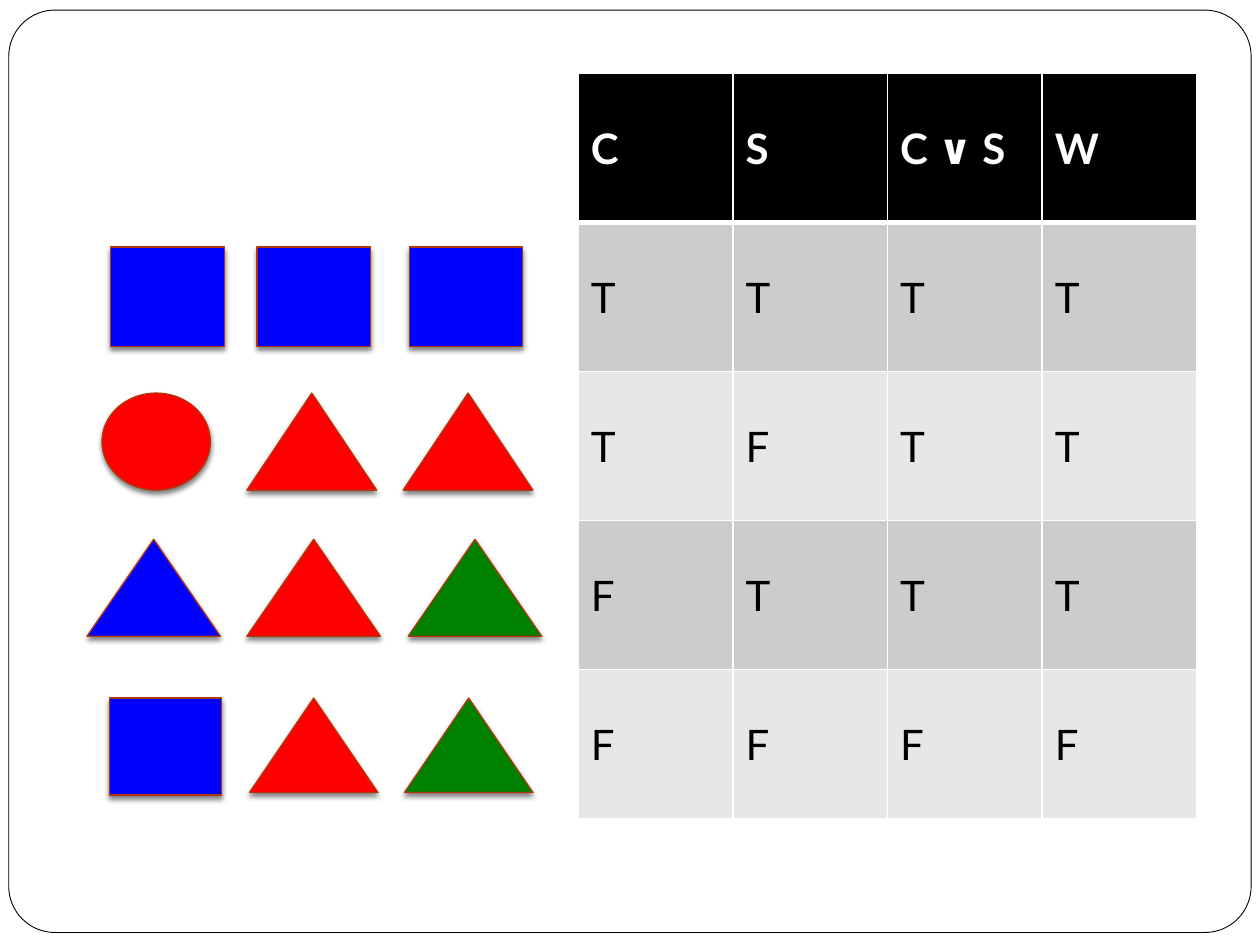
from dataclasses import dataclass

from lxml import etree
from pptx import Presentation
from pptx.dml.color import RGBColor
from pptx.enum.shapes import MSO_SHAPE
from pptx.enum.text import MSO_ANCHOR
from pptx.oxml.ns import qn
from pptx.util import Inches, Pt

SQUARE = MSO_SHAPE.RECTANGLE
CIRCLE = MSO_SHAPE.OVAL
TRIANGLE = MSO_SHAPE.ISOSCELES_TRIANGLE
ROUNDED = MSO_SHAPE.ROUNDED_RECTANGLE
MIDDLE = MSO_ANCHOR.MIDDLE

SLIDE_W, SLIDE_H = Inches(10), Inches(7.5)
BLACK, WHITE = "000000", "FFFFFF"
RED, GREEN, BLUE = "FF0000", "008000", "0000FF"
OUTLINE = "B1360B"
BAND_FILLS = ("CCCCCC", "E7E7E7")

TRUTH_TABLE = (
    ("C", "S", "C ∨ S", "W"),
    ("T", "T", "T", "T"),
    ("T", "F", "T", "T"),
    ("F", "T", "T", "T"),
    ("F", "F", "F", "F"),
)


@dataclass(frozen=True)
class Figure:
    """One object of a world; left, width and height are percent of the slide."""
    kind: int
    color: str
    left: float
    width: float
    height: float


@dataclass(frozen=True)
class World:
    """A row of figures beside its truth-table row; top is percent of the slide."""
    top: float
    figures: tuple[Figure, ...]


WORLDS = (
    World(26.13, tuple(Figure(SQUARE, BLUE, left, 9, 10.53)
                       for left in (8.8, 20.4, 32.5))),
    World(41.6, (Figure(CIRCLE, RED, 8.1, 8.6, 10.27),
                 Figure(TRIANGLE, RED, 19.6, 10.3, 10.27),
                 Figure(TRIANGLE, RED, 32, 10.3, 10.27))),
    World(57.07, tuple(Figure(TRIANGLE, color, left, 10.6, 10.27)
                       for color, left in ((BLUE, 6.9), (RED, 19.6), (GREEN, 32.4)))),
    World(73.87, (Figure(SQUARE, BLUE, 8.7, 8.9, 10.27),
                  Figure(TRIANGLE, RED, 19.8, 10.2, 10),
                  Figure(TRIANGLE, GREEN, 32.1, 10.2, 10))),
)


def rgb(color: str) -> RGBColor:
    return RGBColor.from_string(color)


def across(percent: float) -> int:
    return round(SLIDE_W * percent / 100)


def down(percent: float) -> int:
    return round(SLIDE_H * percent / 100)


def add_filled(shapes, kind: int, box: tuple[float, ...], fill: str,
               line: str, line_width: float):
    left, top, width, height = box
    shape = shapes.add_shape(kind, across(left), down(top), across(width), down(height))
    shape.shadow.inherit = False
    shape.fill.solid()
    shape.fill.fore_color.rgb = rgb(fill)
    shape.line.color.rgb = rgb(line)
    shape.line.width = Pt(line_width)
    return shape


def add_shadow(shape) -> None:
    effects = shape._element.spPr.find(qn("a:effectLst"))
    shadow = etree.SubElement(effects, qn("a:outerShdw"), blurRad=str(Pt(3)),
                              dist=str(Pt(2)), dir="5400000", rotWithShape="0")
    color = etree.SubElement(shadow, qn("a:srgbClr"), val=BLACK)
    etree.SubElement(color, qn("a:alpha"), val="50000")


def add_world(slide, world: World) -> None:
    group = slide.shapes.add_group_shape()
    for figure in world.figures:
        box = (figure.left, world.top, figure.width, figure.height)
        add_shadow(add_filled(group.shapes, figure.kind, box, figure.color, OUTLINE, 0.75))


def set_borders(cell, widths: dict[str, float]) -> None:
    properties = cell._tc.get_or_add_tcPr()
    for position, (side, width) in enumerate(widths.items()):
        border = etree.Element(qn(f"a:ln{side}"), w=str(Pt(width)))
        fill = etree.SubElement(border, qn("a:solidFill"))
        etree.SubElement(fill, qn("a:srgbClr"), val=WHITE)
        properties.insert(position, border)


def format_cell(cell, text: str, row: int) -> None:
    header = row == 0
    cell.text = text
    cell.vertical_anchor = MIDDLE
    cell.fill.solid()
    cell.fill.fore_color.rgb = rgb(BLACK if header else BAND_FILLS[(row - 1) % 2])
    font = cell.text_frame.paragraphs[0].runs[0].font
    for name, value in {"name": "Lato", "size": Pt(24), "bold": header}.items():
        setattr(font, name, value)
    font.color.rgb = rgb(WHITE if header else BLACK)
    set_borders(cell, {"L": 1, "R": 1, "T": 3 if row == 1 else 1, "B": 3 if header else 1})


def add_truth_table(slide) -> None:
    table = slide.shapes.add_table(
        len(TRUTH_TABLE), len(TRUTH_TABLE[0]),
        across(45.9), down(7.8), across(49.1), down(78.8)).table
    for row, values in enumerate(TRUTH_TABLE):
        for column, value in enumerate(values):
            format_cell(table.cell(row, column), value, row)


def main() -> None:
    presentation = Presentation()
    presentation.slide_width, presentation.slide_height = SLIDE_W, SLIDE_H
    slide = presentation.slides.add_slide(presentation.slide_layouts[6])

    frame = add_filled(slide.shapes, ROUNDED, (0.7, 1.07, 98.6, 97.6), WHITE, BLACK, 0.5)
    frame.adjustments[0] = 0.05
    for world in WORLDS:
        add_world(slide, world)
    add_truth_table(slide)
    presentation.save("out.pptx")


if __name__ == "__main__":
    main()
